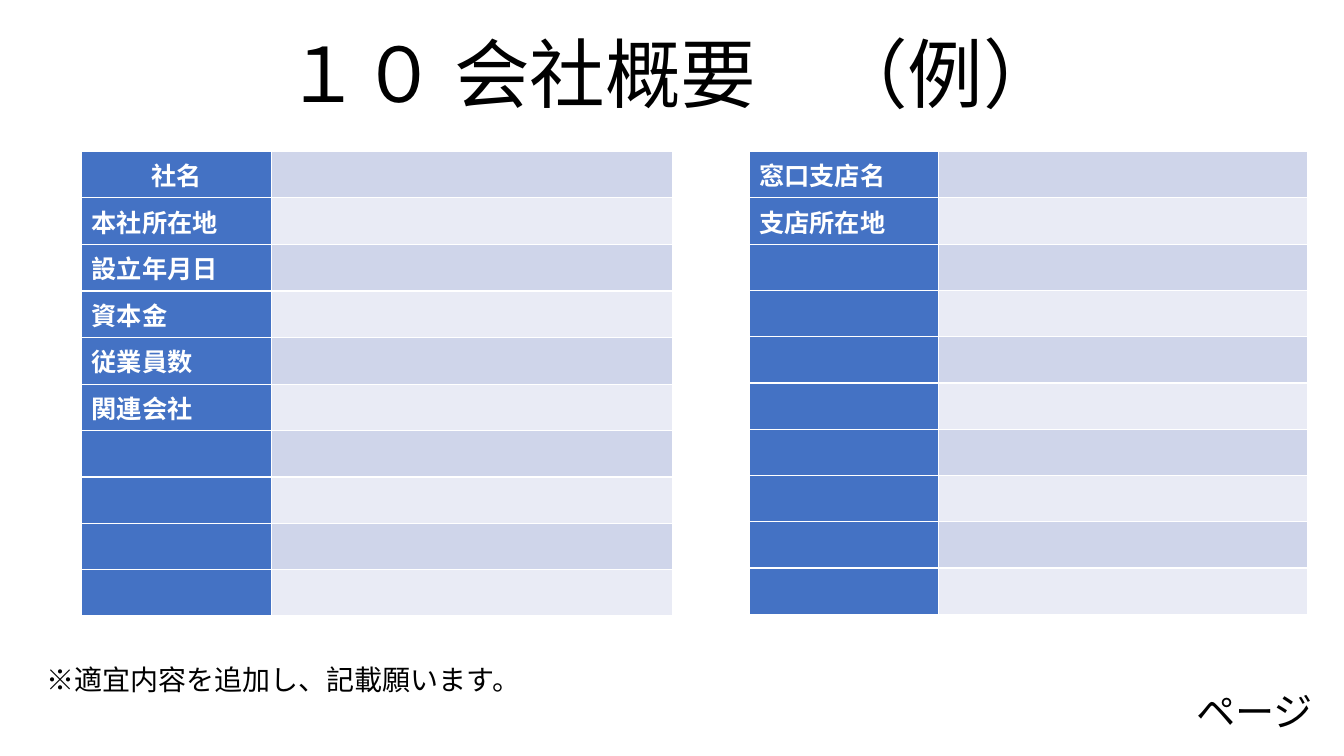
from lxml.etree import SubElement
from pptx import Presentation
from pptx.dml.color import RGBColor
from pptx.enum.text import MSO_ANCHOR, MSO_AUTO_SIZE, PP_ALIGN
from pptx.oxml.ns import qn
from pptx.util import Inches, Pt

FONT = "Noto Sans CJK JP"
ROWS = 10
LABEL_WIDTH = 1.88
COMPANY = ["社名", "本社所在地", "設立年月日", "資本金", "従業員数", "関連会社"]
BRANCH = ["窓口支店名", "支店所在地"]


def rgb(value):
    return RGBColor.from_string(value)


def style(p, size, color, bold=False, align=PP_ALIGN.LEFT):
    p.alignment = align
    font = p.font
    font.size = Pt(size)
    font.bold = bold
    font.color.rgb = rgb(color)
    font.name = FONT
    SubElement(font._element, qn("a:ea"), typeface=FONT)


def write(sp, text, size, align=PP_ALIGN.LEFT):
    tf = sp.text_frame
    tf.word_wrap = True
    tf.auto_size = MSO_AUTO_SIZE.NONE
    tf.vertical_anchor = MSO_ANCHOR.MIDDLE
    p = tf.paragraphs[0]
    p.text = text
    style(p, size, "000000", align=align)


def add_title(s, left, top, width, height, text):
    sp = s.shapes.title
    sp.left, sp.top = Inches(left), Inches(top)
    sp.width, sp.height = Inches(width), Inches(height)
    write(sp, text, 54, PP_ALIGN.CENTER)


def add_text(s, left, top, width, height, text, size, align=PP_ALIGN.LEFT):
    sp = s.shapes.add_textbox(Inches(left), Inches(top), Inches(width), Inches(height))
    write(sp, text, size, align)


def add_profile(s, left, top, width, height, labels, first_align=PP_ALIGN.LEFT):
    table = s.shapes.add_table(
        ROWS, 2, Inches(left), Inches(top), Inches(width), Inches(height)
    ).table
    table.first_row = False
    table.first_col = True
    table.columns[0].width = Inches(LABEL_WIDTH)
    table.columns[1].width = Inches(width - LABEL_WIDTH)
    for i in range(ROWS):
        band = "E9EBF5" if i % 2 else "CFD5EA"
        for j, color in enumerate(["4472C4", band]):
            fill = table.cell(i, j).fill
            fill.solid()
            fill.fore_color.rgb = rgb(color)
    for i, label in enumerate(labels):
        cell = table.cell(i, 0)
        cell.text = label
        align = first_align if i == 0 else PP_ALIGN.LEFT
        style(cell.text_frame.paragraphs[0], 18, "FFFFFF", True, align)


def main():
    prs = Presentation()
    prs.slide_width, prs.slide_height = Inches(13.33), Inches(7.5)
    s = prs.slides.add_slide(prs.slide_layouts[5])
    add_text(s, 0.36, 6.52, 12.61, 0.44, "※適宜内容を追加し、記載願います。", 20)
    add_title(s, 1.13, 0.21, 11.08, 1.01, "１０ 会社概要　（例）")
    add_profile(s, 0.81, 1.5, 5.86, 4.59, COMPANY, PP_ALIGN.CENTER)
    add_text(s, 11.21, 6.77, 1.91, 0.57, "ページ", 28, PP_ALIGN.RIGHT)
    add_profile(s, 7.43, 1.5, 5.54, 4.59, BRANCH)
    prs.save("out.pptx")


if __name__ == "__main__":
    main()
